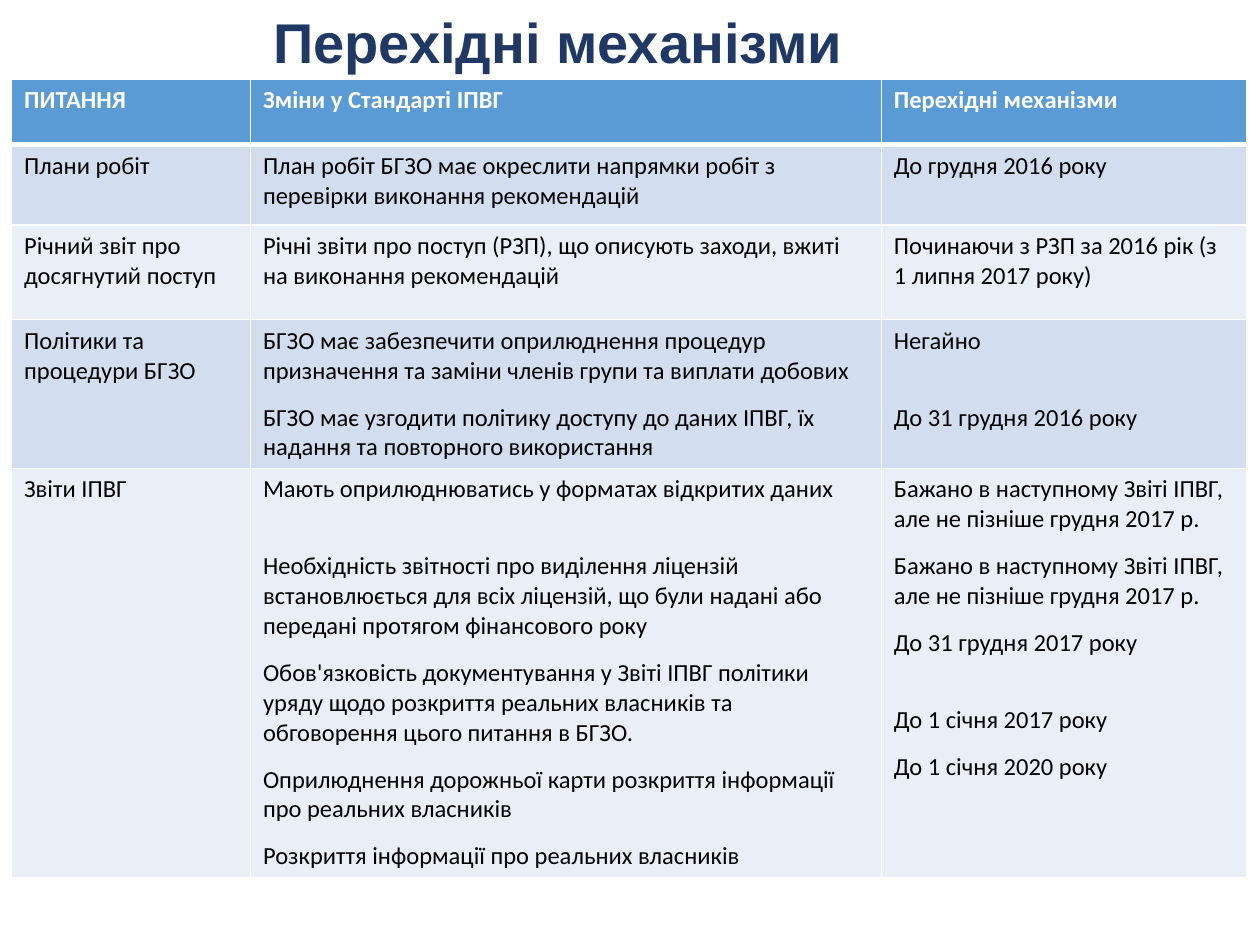
from lxml import etree
from pptx import Presentation, util as u
from pptx.dml.color import RGBColor
from pptx.enum import text
from pptx.oxml.ns import qn

Pt = u.Pt
GAP, WIDE_GAP = 9.8, 26.9  # space between items; wide adds one line


def color(hex_value):
    return RGBColor.from_string(hex_value)


class Deck:
    title_color, header_fill, line_color = "203864", "5B9BD5", "FFFFFF"
    header_text, body_text = "FFFFFF", "000000"
    bands = ("D2DEEF", "EAEFF7")

    def __init__(self, width, height):
        self.prs = Presentation()
        self.prs.slide_width, self.prs.slide_height = Pt(width), Pt(height)
        self.slide = self.prs.slides.add_slide(self.prs.slide_layouts[6])

    def font(self, paragraph, name, size, hex_value, bold):
        font = paragraph.font
        font.name, font.size, font.bold = name, Pt(size), bold
        font.color.rgb = color(hex_value)

    def title(self, wording, left, top, width, height):
        frame = self.slide.shapes.add_textbox(
            Pt(left), Pt(top), Pt(width), Pt(height)).text_frame
        frame.word_wrap = True
        frame.vertical_anchor = text.MSO_ANCHOR.MIDDLE
        heading = frame.paragraphs[0]
        heading.text = wording
        heading.line_spacing = 0.9
        self.font(heading, "Arial", 32, self.title_color, True)

    def borders(self, cell, bottom):
        properties = cell._tc.get_or_add_tcPr()
        for i, side in enumerate("LRTB"):
            width = bottom if side == "B" else 1
            line = etree.Element(qn(f"a:ln{side}"), w=str(Pt(width)))
            fill = etree.SubElement(line, qn("a:solidFill"))
            etree.SubElement(fill, qn("a:srgbClr"), val=self.line_color)
            properties.insert(i, line)

    def cell(self, cell, items, fill, text_color, bold, bottom):
        cell.fill.solid()
        cell.fill.fore_color.rgb = color(fill)
        self.borders(cell, bottom)
        frame = cell.text_frame
        for i, (wording, gap) in enumerate(items):
            item = frame.add_paragraph() if i else frame.paragraphs[0]
            item.text = wording
            if gap:
                item.space_before = Pt(gap)
            self.font(item, "Calibri", 14, text_color, bold)

    def table(self, rows, left, top, widths, heights):
        table = self.slide.shapes.add_table(
            len(rows), len(widths), Pt(left), Pt(top),
            Pt(sum(widths)), Pt(sum(heights))).table
        for column, width in zip(table.columns, widths):
            column.width = Pt(width)
        for r, (row, height) in enumerate(zip(rows, heights)):
            table.rows[r].height = Pt(height)
            if r:
                style = self.bands[(r - 1) % 2], self.body_text, False, 1
            else:
                style = self.header_fill, self.header_text, True, 3
            for c, content in enumerate(row):
                items = [(content, 0)] if isinstance(content, str) else content
                self.cell(table.cell(r, c), items, *style)


NEXT_REPORT = "Бажано в наступному Звіті ІПВГ, але не пізніше грудня 2017 р."

ROWS = [
    ("ПИТАННЯ", "Зміни у Стандарті ІПВГ", "Перехідні механізми"),
    ("Плани робіт",
     "План робіт БГЗО має окреслити напрямки робіт з перевірки виконання рекомендацій",
     "До грудня 2016 року"),
    ("Річний звіт про досягнутий поступ",
     "Річні звіти про поступ (РЗП), що описують заходи, вжиті на виконання рекомендацій",
     "Починаючи з РЗП за 2016 рік (з 1 липня 2017 року)"),
    ("Політики та процедури БГЗО",
     [("БГЗО має забезпечити оприлюднення процедур призначення та заміни "
       "членів групи та виплати добових", 0),
      ("БГЗО має узгодити політику доступу до даних ІПВГ, їх надання та "
       "повторного використання", GAP)],
     [("Негайно", 0), ("До 31 грудня 2016 року", WIDE_GAP)]),
    ("Звіти ІПВГ",
     [("Мають оприлюднюватись у форматах відкритих даних", 0),
      ("Необхідність звітності про виділення ліцензій встановлюється для всіх "
       "ліцензій, що були надані або передані протягом фінансового року", WIDE_GAP),
      ("Обов'язковість документування у Звіті ІПВГ політики уряду щодо розкриття "
       "реальних власників та обговорення цього питання в БГЗО.", GAP),
      ("Оприлюднення дорожньої карти розкриття інформації про реальних власників", GAP),
      ("Розкриття інформації про реальних власників", GAP)],
     [(NEXT_REPORT, 0), (NEXT_REPORT, GAP), ("До 31 грудня 2017 року", GAP),
      ("До 1 січня 2017 року", WIDE_GAP), ("До 1 січня 2020 року", GAP)]),
]


def main():
    deck = Deck(720, 540)
    # Heading
    deck.title("Перехідні механізми", 149, 7.2, 421, 37.4)
    # Changes and their deadlines
    deck.table(ROWS, 6.6, 45.3, (136.5, 360.5, 209), (37.4, 46, 54, 85, 234))
    deck.prs.save("out.pptx")


if __name__ == "__main__":
    main()
